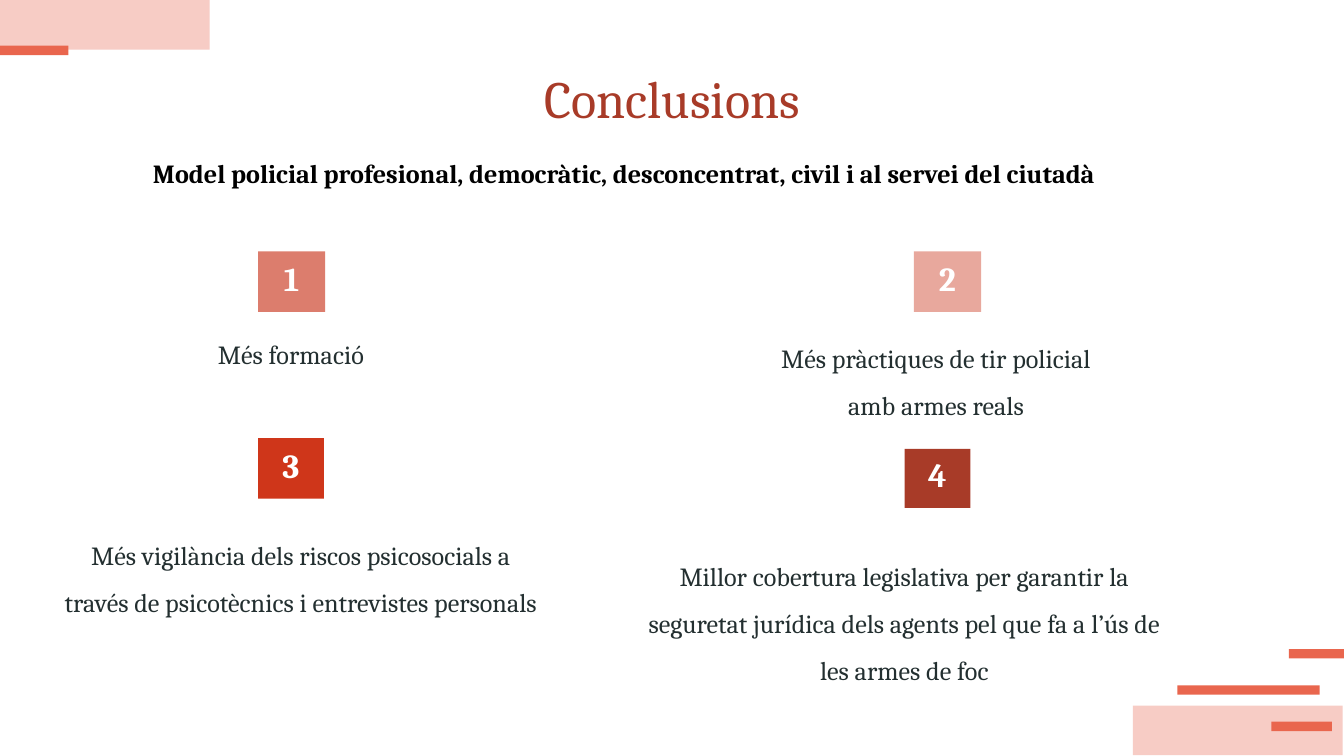
from pptx import Presentation
from pptx.dml.color import RGBColor
from pptx.enum.shapes import MSO_SHAPE as SHAPE
from pptx.enum.text import MSO_ANCHOR as ANCHOR, PP_ALIGN as ALIGN
from pptx.util import Inches, Pt

THEME = {
    "font": "Cambria",
    "title": "A83B28", "heading": "000000", "body": "232F30", "number": "FFFFFF",
    "block": "F7CCC5", "bar": "E9664E",
    "title_size": 28, "number_size": 18, "text_size": 14,
}

TITLE = "Conclusions"
HEADING = "Model policial profesional, democràtic, desconcentrat, civil i al servei del ciutadà"

# number box, its fill, text, text box, line spacing
CONCLUSIONS = [
    ((1.92, 1.87, 0.5, 0.45), "DC7D6D", "Més formació", (0.83, 2.42, 2.67, 0.82), 1),
    ((6.8, 1.87, 0.5, 0.45), "E8A89D", "Més pràctiques de tir policial amb armes reals",
     (5.63, 2.33, 2.67, 0.82), 1.5),
    ((1.92, 3.26, 0.49, 0.45), "CF361A",
     "Més vigilància dels riscos psicosocials a través de psicotècnics i entrevistes personals",
     (0.37, 3.8, 3.74, 0.82), 1.5),
    ((6.73, 3.34, 0.49, 0.44), "A83B28",
     "Millor cobertura legislativa per garantir la seguretat jurídica dels agents "
     "pel que fa a l’ús de les armes de foc",
     (4.7, 3.95, 4.06, 0.82), 1.5),
]

DECORATION = [
    ("block", (0, 0, 1.56, 0.37)),
    ("block", (8.43, 5.25, 1.56, 0.37)),
    ("bar", (0, 0.34, 0.51, 0.07)),
    ("bar", (9.59, 4.83, 0.41, 0.07)),
    ("bar", (9.46, 5.37, 0.45, 0.07)),
    ("bar", (8.76, 5.1, 1.06, 0.07)),
]


def inches(box):
    return [Inches(v) for v in box]


def add_rect(slide, box, color):
    sp = slide.shapes.add_shape(SHAPE.RECTANGLE, *inches(box))
    sp.shadow.inherit = False
    sp.fill.solid()
    sp.fill.fore_color.rgb = RGBColor.from_string(color)
    sp.line.fill.background()
    return sp


def write(sp, text, role, size, bold=False, align=ALIGN.CENTER, anchor=ANCHOR.TOP,
          spacing=1, inset=0.1, wrap=True):
    tf = sp.text_frame
    tf.word_wrap = wrap
    tf.vertical_anchor = anchor
    tf.margin_left = tf.margin_right = Inches(0.1)
    tf.margin_top = tf.margin_bottom = Inches(inset)
    p = tf.paragraphs[0]
    p.text = text
    p.alignment = align
    p.line_spacing = spacing
    p.font.name = THEME["font"]
    p.font.size = Pt(size)
    p.font.bold = bold
    p.font.color.rgb = RGBColor.from_string(THEME[role])


def main():
    prs = Presentation()
    prs.slide_width = Inches(10)
    prs.slide_height = prs.slide_width * 9 // 16
    slide = prs.slides.add_slide(prs.slide_layouts[5])

    for role, box in DECORATION:
        add_rect(slide, box, THEME[role])

    title = slide.shapes.title
    title.left, title.top, title.width, title.height = inches((0.83, 0.41, 8.34, 0.63))
    write(title, TITLE, "title", THEME["title_size"], anchor=ANCHOR.MIDDLE)

    heading = slide.shapes.add_textbox(*inches((1.04, 1.12, 8.13, 0.34)))
    write(heading, HEADING, "heading", THEME["text_size"], bold=True, align=ALIGN.LEFT,
          inset=0.05, wrap=False)

    for number, (box, fill, text, text_box, spacing) in enumerate(CONCLUSIONS, 1):
        write(add_rect(slide, box, fill), str(number), "number", THEME["number_size"],
              bold=True, anchor=ANCHOR.BOTTOM)
        write(slide.shapes.add_textbox(*inches(text_box)), text, "body",
              THEME["text_size"], spacing=spacing)

    prs.save("out.pptx")


if __name__ == "__main__":
    main()
